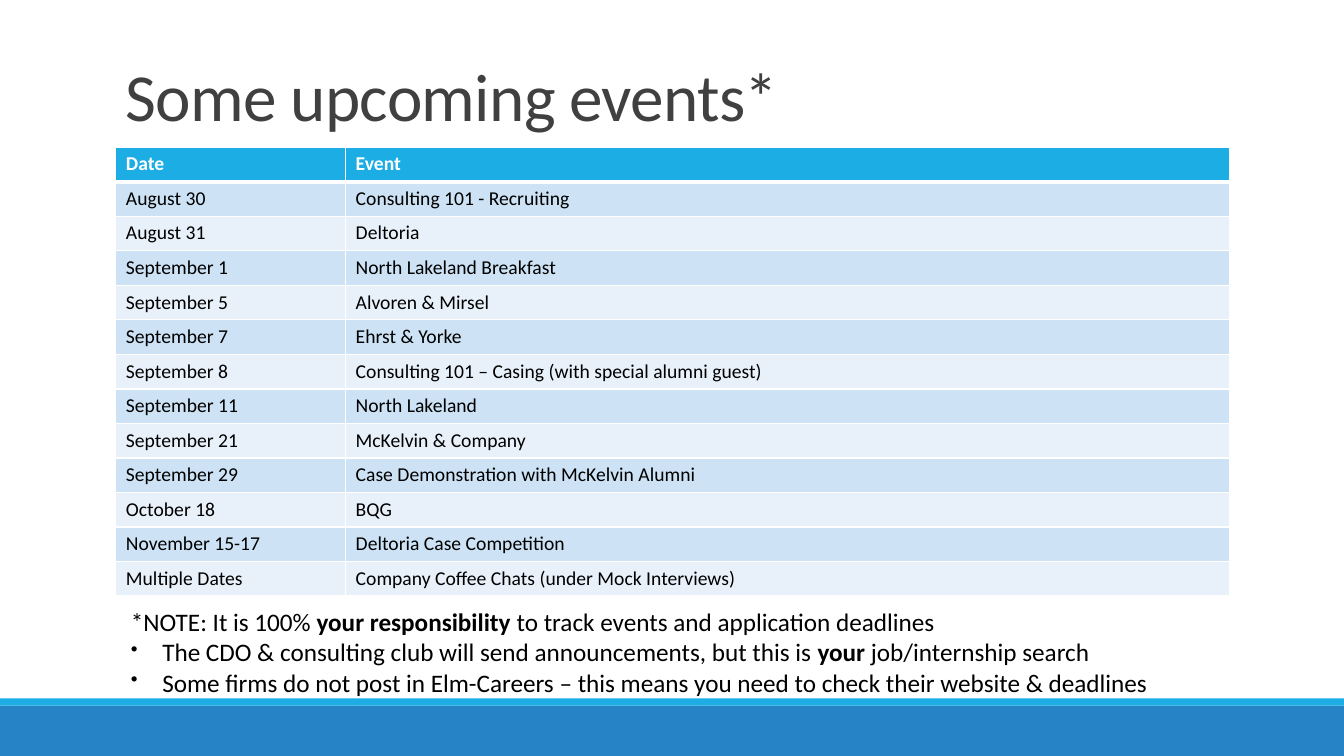
"""Builds a slide listing upcoming consulting recruiting events."""
from dataclasses import dataclass

from lxml import etree
from pptx import Presentation
from pptx.dml.color import RGBColor
from pptx.enum.shapes import MSO_SHAPE
from pptx.enum.text import MSO_ANCHOR
from pptx.oxml.ns import qn
from pptx.util import Cm, Pt

RECTANGLE = MSO_SHAPE.RECTANGLE
TOP, BOTTOM = MSO_ANCHOR.TOP, MSO_ANCHOR.BOTTOM

EVENTS = [
    ("Date", "Event"),
    ("August 30", "Consulting 101 - Recruiting"),
    ("August 31", "Deltoria"),
    ("September 1", "North Lakeland Breakfast"),
    ("September 5", "Alvoren & Mirsel"),
    ("September 7", "Ehrst & Yorke"),
    ("September 8", "Consulting 101 – Casing (with special alumni guest)"),
    ("September 11", "North Lakeland"),
    ("September 21", "McKelvin & Company"),
    ("September 29", "Case Demonstration with McKelvin Alumni"),
    ("October 18", "BQG"),
    ("November 15-17", "Deltoria Case Competition"),
    ("Multiple Dates", "Company Coffee Chats (under Mock Interviews)"),
]

NOTE = [("*NOTE: It is 100% ", False), ("your responsibility ", True),
        ("to track events and application deadlines", False)]
NOTE_BULLETS = [
    [("The CDO & consulting club will send announcements, but this is ", False),
     ("your", True), (" job/internship search", False)],
    [("Some firms do not post in Elm-Careers – this means you need to "
      "check their website & deadlines", False)],
]


@dataclass(frozen=True)
class Theme:
    """Colours, font and type sizes."""

    font: str = "Calibri"
    title_size: int = 48
    note_size: int = 18
    table_size: int = 14
    title: str = "404040"
    text: str = "000000"
    white: str = "FFFFFF"
    accent: str = "1CADE4"
    footer: str = "2683C6"
    bands: tuple = ("E8F1FA", "CDE3F5")


def add_text(paragraph, text, *, font, size, color, bold=False, spacing=None):
    """Append a formatted run to a paragraph."""
    run = paragraph.add_run()
    run.text = text
    run.font.name = font
    run.font.size = Pt(size)
    run.font.bold = bold
    run.font.color.rgb = RGBColor.from_string(color)
    if spacing is not None:
        run.font._element.set("spc", str(spacing))


def add_bullet(paragraph, indent):
    """Give a paragraph a small hanging bullet."""
    properties = paragraph._p.get_or_add_pPr()
    properties.set("marL", str(indent))
    properties.set("indent", str(-indent))
    etree.SubElement(properties, qn("a:buSzPct")).set("val", "80000")
    etree.SubElement(properties, qn("a:buChar")).set("char", "•")


def add_borders(cell, color, widths):
    """Draw the cell's left, right, top and bottom borders."""
    properties = cell._tc.get_or_add_tcPr()
    for side, width in zip("LRTB", widths):
        line = etree.SubElement(properties, qn(f"a:ln{side}"), w=str(Pt(width)))
        fill = etree.SubElement(line, qn("a:solidFill"))
        etree.SubElement(fill, qn("a:srgbClr")).set("val", color)


class SlideBuilder:
    """Adds themed elements to one slide."""

    def __init__(self, slide, theme):
        self.slide = slide
        self.theme = theme

    def bar(self, left, top, width, height, color):
        """Add a plain filled rectangle."""
        shape = self.slide.shapes.add_shape(
            RECTANGLE, Cm(left), Cm(top), Cm(width), Cm(height))
        shape.shadow.inherit = False
        shape.fill.solid()
        shape.fill.fore_color.rgb = RGBColor.from_string(color)
        shape.line.fill.background()

    def text_box(self, left, top, width, height, anchor=TOP):
        """Add a wrapping text box and return its text frame."""
        shape = self.slide.shapes.add_textbox(
            Cm(left), Cm(top), Cm(width), Cm(height))
        shape.text_frame.word_wrap = True
        shape.text_frame.vertical_anchor = anchor
        return shape.text_frame

    def title(self, text, *bounds):
        """Add the slide title."""
        paragraph = self.text_box(*bounds, anchor=BOTTOM).paragraphs[0]
        paragraph.line_spacing = 0.85
        add_text(paragraph, text, font=self.theme.font, spacing=-50,
                 size=self.theme.title_size, color=self.theme.title)

    def note(self, opening, bullets, *bounds):
        """Add an opening line followed by bullets."""
        frame = self.text_box(*bounds)
        for index, runs in enumerate([opening, *bullets]):
            paragraph = frame.add_paragraph() if index else frame.paragraphs[0]
            if index:
                add_bullet(paragraph, Cm(0.79))
            for text, bold in runs:
                add_text(paragraph, text, font=self.theme.font, bold=bold,
                         size=self.theme.note_size, color=self.theme.text)

    def table(self, rows, left, top, column_widths, row_height):
        """Add a banded table with a header row."""
        theme = self.theme
        table = self.slide.shapes.add_table(
            len(rows), len(column_widths), Cm(left), Cm(top),
            Cm(sum(column_widths)), Cm(row_height * len(rows))).table
        for column, width in zip(table.columns, column_widths):
            column.width = Cm(width)
        for row_index, values in enumerate(rows):
            header = row_index == 0
            fill = theme.accent if header else theme.bands[row_index % 2]
            widths = (1, 1, 3 if row_index == 1 else 1, 3 if header else 1)
            table.rows[row_index].height = Cm(row_height)
            for column_index, value in enumerate(values):
                cell = table.cell(row_index, column_index)
                add_borders(cell, theme.white, widths)
                cell.fill.solid()
                cell.fill.fore_color.rgb = RGBColor.from_string(fill)
                add_text(cell.text_frame.paragraphs[0], value,
                         font=theme.font, size=theme.table_size, bold=header,
                         color=theme.white if header else theme.text)


def main():
    """Build and save the presentation."""
    presentation = Presentation()
    presentation.slide_width = Cm(33.87)
    presentation.slide_height = Cm(19.05)
    slide = presentation.slides.add_slide(presentation.slide_layouts[6])
    theme = Theme()
    builder = SlideBuilder(slide, theme)
    builder.bar(0, 17.78, 33.87, 1.27, theme.footer)
    builder.bar(0, 17.6, 33.87, 0.18, theme.accent)
    builder.title("Some upcoming events*", 2.92, 1.37, 27.94, 2.16)
    builder.table(EVENTS, 2.92, 3.71, (5.79, 22.28), 0.87)
    builder.note(NOTE, NOTE_BULLETS, 3.05, 15.16, 27.94, 3.33)
    presentation.save("out.pptx")


if __name__ == "__main__":
    main()
